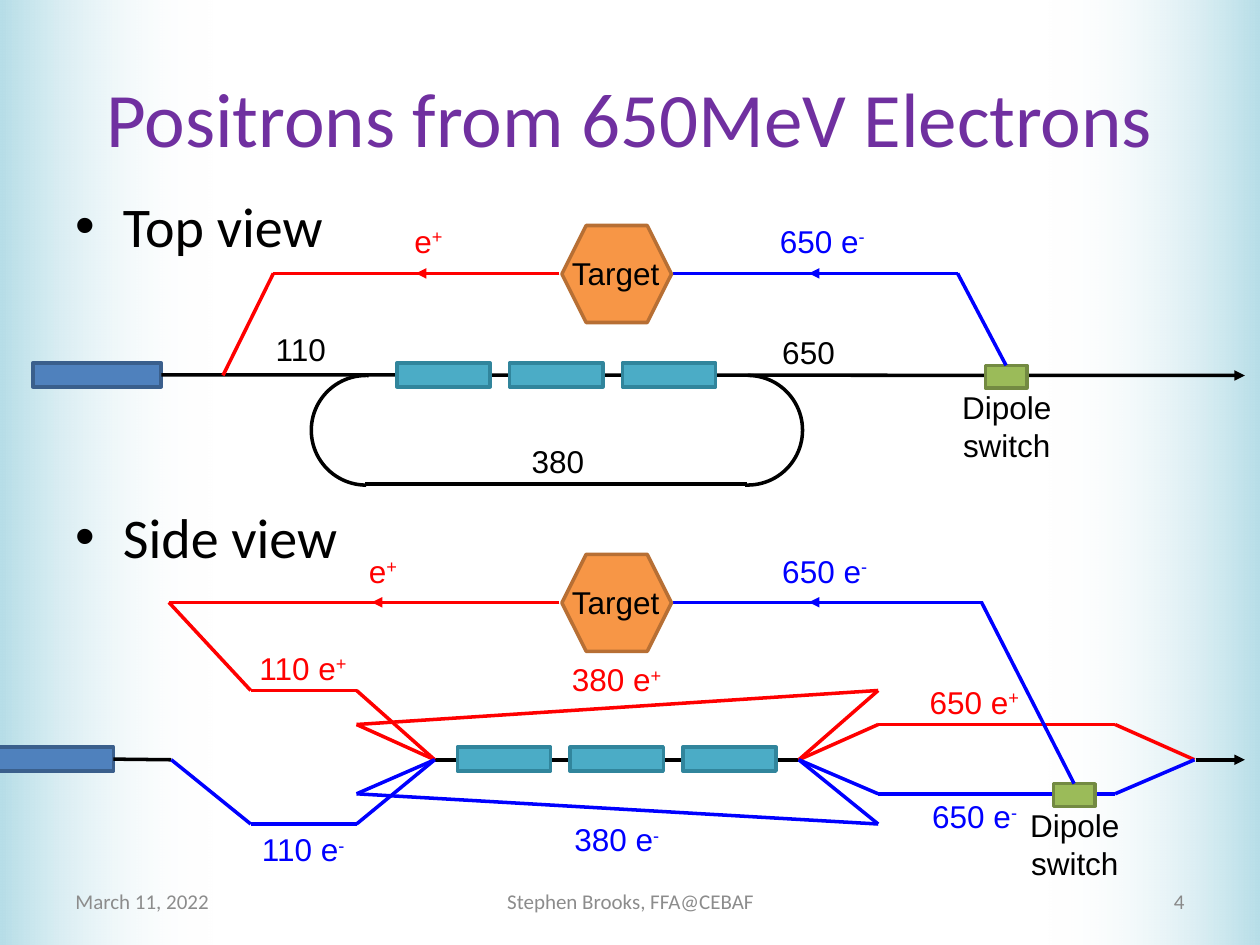
from dataclasses import dataclass

import pptx
import pptx.dml.color
import pptx.enum.shapes
import pptx.enum.text
import pptx.oxml.ns
import pptx.util
from lxml import etree
from pptx.util import Inches

COLOURS = {
    "black": "000000", "red": "FF0000", "blue": "0000FF", "title": "7030A0",
    "footer": "8C8C8C", "page": "898989", "edge": "B7DEE8", "white": "FFFFFF",
    "gun": "4F81BD", "gun line": "3A5F8C", "cavity": "4BACC6", "cavity line": "31859C",
    "dipole": "9BBB59", "dipole line": "738A42", "target": "F79646", "target line": "B76F34",
}
ALIGN = pptx.enum.text.PP_ALIGN
ANCHOR = pptx.enum.text.MSO_ANCHOR
SHAPE = pptx.enum.shapes.MSO_SHAPE
qn = pptx.oxml.ns.qn

TOP_BEAM, SIDE_BEAM = 2.98, 6.03
TOP_TARGET, SIDE_TARGET = 2.17, 4.78


@dataclass
class Track:
    """Straight beam segments through the points, optionally ending in an arrowhead."""
    colour: str
    points: list[tuple[float, float]]
    arrow: bool = False


@dataclass
class Label:
    text: str
    left: float
    top: float
    width: float
    colour: str = "black"
    charge: str = ""


def rgb(name: str) -> pptx.dml.color.RGBColor:
    return pptx.dml.color.RGBColor.from_string(COLOURS[name])


def add_text(slide, text: str, left: float, top: float, width: float, *, height=0.4,
             superscript="", colour="black", size=18, font="Arial",
             align=ALIGN.LEFT, anchor=ANCHOR.TOP, wrap=False):
    box = slide.shapes.add_textbox(*map(Inches, (left, top, width, height)))
    frame = box.text_frame
    frame.word_wrap = wrap
    frame.vertical_anchor = anchor
    paragraph = frame.paragraphs[0]
    paragraph.alignment = align
    for part in filter(None, (text, superscript)):
        run = paragraph.add_run()
        run.text = part
        run.font.size = pptx.util.Pt(size)
        run.font.name = font
        run.font.color.rgb = rgb(colour)
    if superscript:
        box.element.findall(".//" + qn("a:rPr"))[-1].set("baseline", "30000")
    return box


def add_block(slide, kind: str, left: float, top: float, width: float, height: float,
              preset=SHAPE.RECTANGLE):
    shape = slide.shapes.add_shape(preset, *map(Inches, (left, top, width, height)))
    shape.shadow.inherit = False
    shape.fill.solid()
    shape.fill.fore_color.rgb = rgb(kind)
    shape.line.color.rgb = rgb(kind + " line")
    shape.line.width = pptx.util.Pt(2)
    return shape


def add_line(slide, start: tuple[float, float], end: tuple[float, float], colour: str,
             arrow: bool = False):
    connector = slide.shapes.add_connector(
        pptx.enum.shapes.MSO_CONNECTOR.STRAIGHT, *map(Inches, (*start, *end)))
    connector.line.color.rgb = rgb(colour)
    connector.line.width = pptx.util.Pt(2)
    properties = connector.element.spPr
    if arrow:
        etree.SubElement(properties.find(qn("a:ln")), qn("a:tailEnd"), type="triangle")
    etree.SubElement(properties, qn("a:effectLst"))
    return connector


def add_track(slide, track: Track) -> None:
    for start, end in zip(track.points, track.points[1:]):
        add_line(slide, start, end, track.colour, track.arrow)


def add_cavities(slide, left: float, beam: float) -> None:
    for index in range(3):
        add_block(slide, "cavity", left + index * 0.895, beam - 0.1, 0.74, 0.19)


def add_target(slide, centre: float) -> None:
    add_block(slide, "target", 4.46, centre - 0.38, 0.87, 0.77, SHAPE.HEXAGON)
    add_text(slide, "Target", 4.44, centre - 0.2, 0.9)


def add_dipole(slide, left: float, top: float, extraction: tuple[float, float]) -> None:
    """Dipole switch, its caption and the electron line leaving from its top."""
    dipole = add_block(slide, "dipole", left, top, 0.33, 0.18)
    line = add_line(slide, extraction, (left + 0.17, top), "blue")
    line.end_connect(dipole, 0)
    add_text(slide, "Dipole switch", left - 0.34, top + 0.13, 1.02, height=0.71,
             align=ALIGN.CENTER, wrap=True)


def add_arc(slide, left: float, rotation: int) -> None:
    arc = slide.shapes.add_shape(SHAPE.ARC, *map(Inches, (left, TOP_BEAM, 0.87, 0.87)))
    arc.shadow.inherit = False
    arc.adjustments[1] = 55.62
    arc.rotation = rotation
    arc.fill.background()
    arc.line.color.rgb = rgb("black")
    arc.line.width = pptx.util.Pt(2)


def add_edge_fade(slide, left: float, rotation: int) -> None:
    panel = slide.shapes.add_shape(SHAPE.RECTANGLE, *map(Inches, (left, 0, 1.69, 7.5)))
    panel.shadow.inherit = False
    panel.rotation = rotation
    panel.line.fill.background()
    panel.fill.gradient()
    panel.fill.gradient_angle = 0
    for stop, colour, position in zip(panel.fill.gradient_stops, ("edge", "white"), (0, 1)):
        stop.color.rgb = rgb(colour)
        stop.position = position
    clear = panel.element.findall(".//" + qn("a:gs") + "/" + qn("a:srgbClr"))[-1]
    etree.SubElement(clear, qn("a:alpha"), val="0")
    panel.element.getparent().insert(2, panel.element)


def fill_placeholders(slide) -> None:
    title, body = slide.placeholders
    title.left, title.top, title.width, title.height = map(Inches, (0.5, 0.3, 9, 1.25))
    title.text_frame.text = "Positrons from 650MeV Electrons"
    title.text_frame.paragraphs[0].font.color.rgb = rgb("title")
    body.left, body.top, body.width, body.height = map(Inches, (0.5, 1.47, 9, 5.23))
    body.text_frame.text = "Top view\nSide view"
    for paragraph in body.text_frame.paragraphs:
        paragraph.font.size = pptx.util.Pt(32)
    body.text_frame.paragraphs[1].space_before = pptx.util.Pt(139)


TOP_TRACKS = [
    Track("black", [(2.9, 3.84), (5.93, 3.84)]),
    Track("red", [(4.44, TOP_TARGET), (3.3, TOP_TARGET)], True),
    Track("red", [(4.44, TOP_TARGET), (2.17, TOP_TARGET), (1.77, TOP_BEAM)]),
    Track("blue", [(7.6, TOP_TARGET), (6.42, TOP_TARGET)], True),
    Track("blue", [(5.34, TOP_TARGET), (7.6, TOP_TARGET)]),
]
SIDE_TRACKS = [
    Track("black", [(9.49, SIDE_BEAM), (9.88, SIDE_BEAM)], True),
    Track("black", [(3.45, SIDE_BEAM), (6.34, SIDE_BEAM)]),
    Track("red", [(4.44, SIDE_TARGET), (2.95, SIDE_TARGET)], True),
    Track("red", [(4.44, SIDE_TARGET), (1.34, SIDE_TARGET), (1.99, 5.48), (2.83, 5.48),
                  (3.45, SIDE_BEAM), (2.83, 5.75), (6.97, 5.48), (6.34, SIDE_BEAM),
                  (6.97, 5.75), (8.85, 5.75), (9.48, SIDE_BEAM)]),
    Track("blue", [(1.36, SIDE_BEAM), (1.99, 6.54), (2.83, 6.54), (3.45, SIDE_BEAM),
                   (2.83, 6.3), (6.97, 6.54), (6.34, SIDE_BEAM), (6.97, 6.3),
                   (8.85, 6.3), (9.48, SIDE_BEAM)]),
    Track("blue", [(7.8, SIDE_TARGET), (6.42, SIDE_TARGET)], True),
    Track("blue", [(5.34, SIDE_TARGET), (7.8, SIDE_TARGET)]),
]
LABELS = [
    Label("110", 2.09, 2.57, 0.6),
    Label("650", 6.11, 2.59, 0.62),
    Label("380", 4.12, 3.46, 0.62),
    Label("380 e", 4.44, 5.19, 0.93, "red", "+"),
    Label("380 e", 4.46, 6.46, 0.89, "blue", "-"),
    Label("110 e", 1.96, 5.1, 0.91, "red", "+"),
    Label("110 e", 1.98, 6.54, 0.87, "blue", "-"),
    Label("650 e", 7.28, 5.37, 0.93, "red", "+"),
    Label("650 e", 7.3, 6.28, 0.89, "blue", "-"),
    Label("650 e", 6.11, 4.33, 0.89, "blue", "-"),
    Label("650 e", 6.09, 1.71, 0.89, "blue", "-"),
    Label("e", 3.19, 1.71, 0.44, "red", "+"),
    Label("e", 2.83, 4.33, 0.44, "red", "+"),
]
FOOTERS = [
    (Label("March 11, 2022", 0.5, 6.95, 2.33, "footer"), ALIGN.LEFT),
    (Label("Stephen Brooks, FFA@CEBAF", 3.42, 6.95, 3.17, "footer"), ALIGN.CENTER),
    (Label("4", 7.17, 6.95, 2.33, "page"), ALIGN.RIGHT),
]


def main() -> None:
    presentation = pptx.Presentation()
    presentation.slide_width, presentation.slide_height = Inches(10), Inches(7.5)
    slide = presentation.slides.add_slide(presentation.slide_layouts[1])
    fill_placeholders(slide)
    add_edge_fade(slide, 0, 0)
    add_edge_fade(slide, 8.31, 180)

    for gun_left, beam, beam_end, arrow, cavities, target, tracks in (
            (0.26, TOP_BEAM, 9.88, True, 3.15, TOP_TARGET, TOP_TRACKS),
            (-0.12, SIDE_BEAM, 1.36, False, 3.63, SIDE_TARGET, SIDE_TRACKS)):
        gun = add_block(slide, "gun", gun_left, beam - 0.1, 1.02, 0.19)
        beam_line = add_line(slide, (gun_left + 1.02, beam), (beam_end, beam), "black", arrow)
        beam_line.begin_connect(gun, 3)
        for track in tracks:
            add_track(slide, track)
        add_cavities(slide, cavities, beam)
        add_target(slide, target)
    add_arc(slide, 5.5, 0)
    add_arc(slide, 2.47, 180)
    add_dipole(slide, 7.82, 2.9, (7.6, TOP_TARGET))
    add_dipole(slide, 8.36, 6.22, (7.79, SIDE_TARGET))

    for label in LABELS:
        add_text(slide, label.text, label.left, label.top, label.width,
                 colour=label.colour, superscript=label.charge)
    for label, align in FOOTERS:
        add_text(slide, label.text, label.left, label.top, label.width, colour=label.colour,
                 size=12, font="Calibri", align=align, anchor=ANCHOR.MIDDLE, wrap=True)
    presentation.save("out.pptx")


if __name__ == "__main__":
    main()
